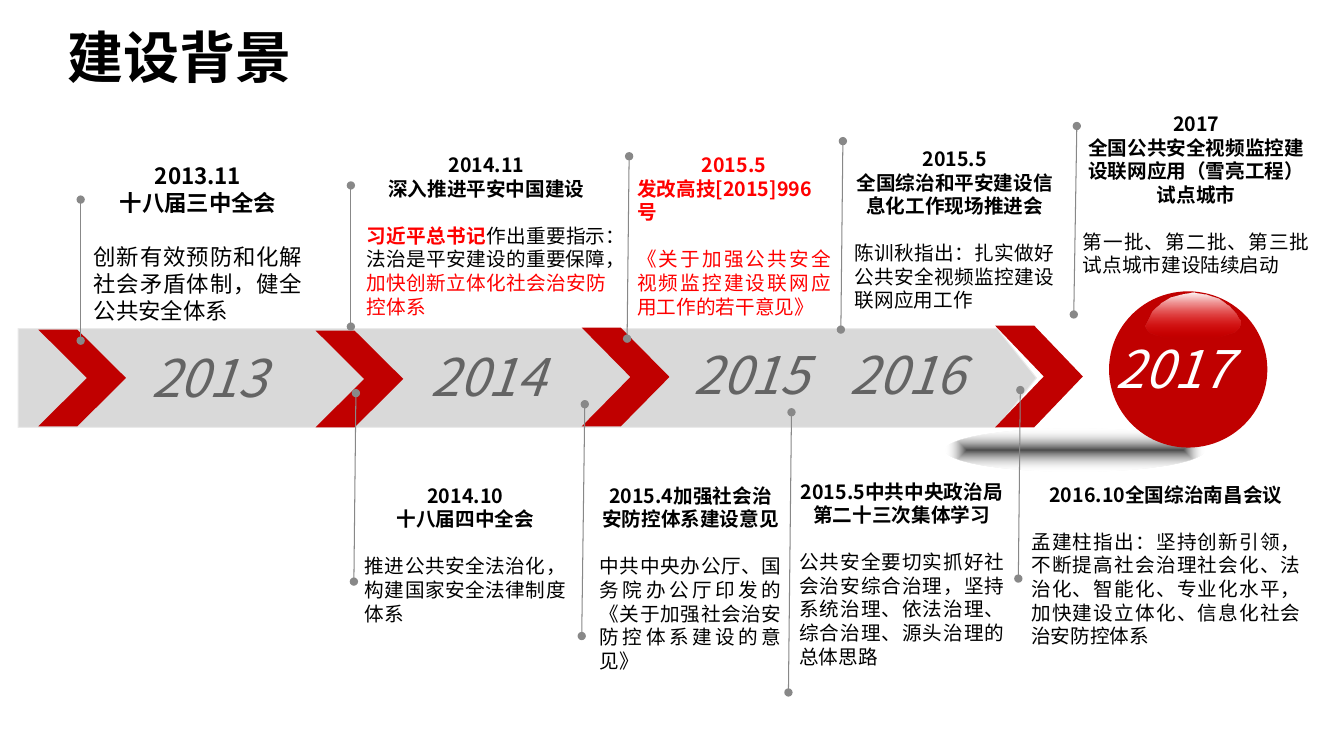
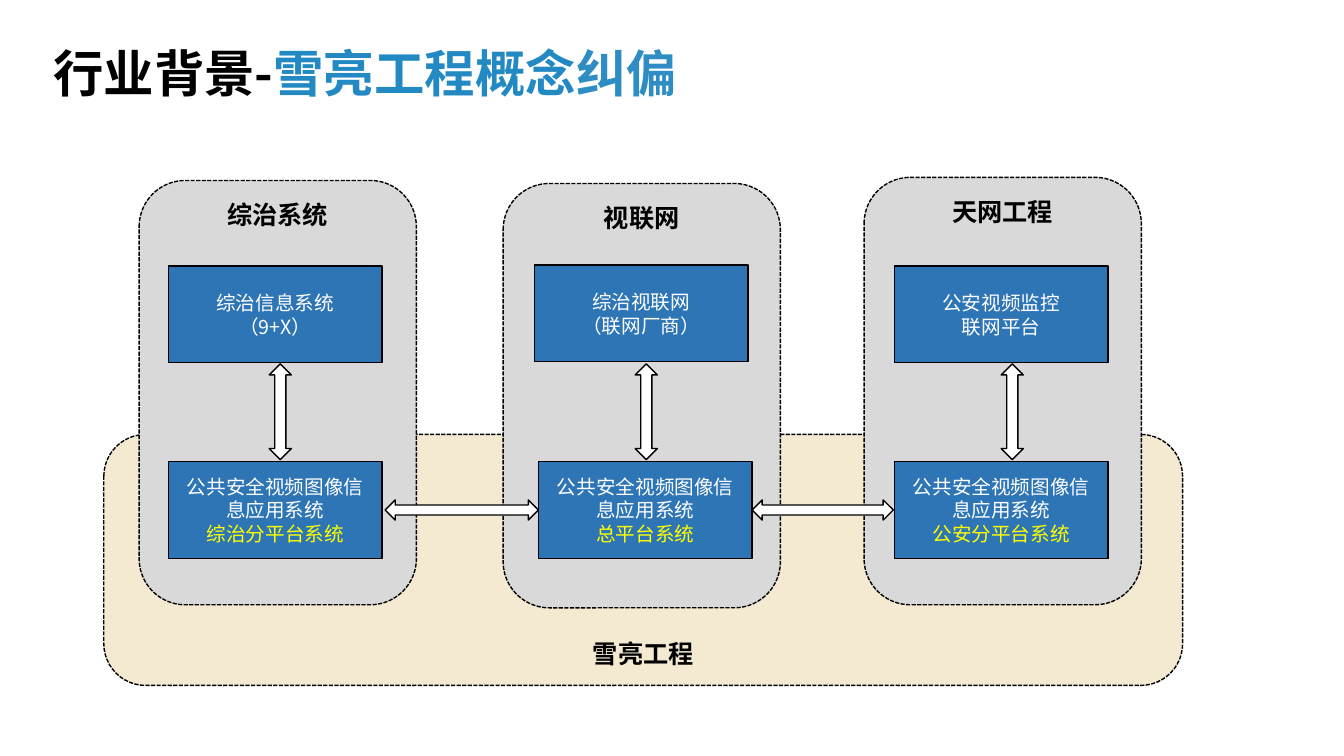
"""Build two slides: a project timeline and a system concept diagram."""
from lxml.etree import SubElement
from pptx import Presentation
from pptx.dml.color import RGBColor
from pptx.enum.dml import MSO_LINE
from pptx.enum.shapes import MSO_CONNECTOR, MSO_SHAPE as SHAPE
from pptx.enum.text import MSO_ANCHOR as ANCHOR, PP_ALIGN as ALIGN
from pptx.oxml import parse_xml
from pptx.oxml.ns import nsdecls, qn
from pptx.util import Pt

PX = 9144
FONT = "Noto Sans CJK SC"
COLOURS = {
    "black": "000000", "white": "FFFFFF", "red": "FF0000", "crimson": "C00000",
    "band": "D9D9D9", "band_edge": "EAEAEA", "year": "646464", "pin": "888888",
    "box": "2E75B6", "yellow": "FFFF00", "sand": "BF9000",
    "sky": "2289C2", "sky_end": "2E8DC2",
}
RGB = {name: RGBColor.from_string(value) for name, value in COLOURS.items()}
CENTER, LEFT, JUSTIFY = ALIGN.CENTER, ALIGN.LEFT, ALIGN.JUSTIFY
TITLE = {"bold": True}
YEAR = {"italic": True}


def write(holder, lines, size, anchor=ANCHOR.TOP, inset=(10, 5), pitch=1.2):
    """Fill a shape with (align, gap, [(text, colour, format)]) paragraphs."""
    frame = holder.text_frame
    across, down = (value * PX for value in inset)
    for name, value in {"word_wrap": True, "vertical_anchor": anchor,
                        "margin_left": across, "margin_right": across,
                        "margin_top": down, "margin_bottom": down}.items():
        setattr(frame, name, value)
    for index, (align, gap, spans) in enumerate(lines):
        para = frame.add_paragraph() if index else frame.paragraphs[0]
        para.alignment = align
        para.line_spacing = Pt(size * pitch)
        para.space_before = Pt(gap)
        for text, colour, style in spans:
            span = para.add_run()
            span.text = text
            values = {"name": FONT, "size": Pt(size), "bold": False, "italic": False}
            for name, value in (values | style).items():
                setattr(span.font, name, value)
            span.font.color.rgb = RGB[colour]
            SubElement(span._r.get_or_add_rPr(), qn("a:ea")).set("typeface", FONT)


def draw(page, kind, area, fill, edge=None, width=1, dash=None):
    """Add a flat preset shape, or a text box when kind is None."""
    place = [value * PX for value in area]
    if kind is None:
        return page.shapes.add_textbox(*place)
    shape = page.shapes.add_shape(kind, *place)
    shape.shadow.inherit = False
    shape.fill.solid()
    shape.fill.fore_color.rgb = RGB[fill]
    if edge:
        shape.line.color.rgb = RGB[edge]
        shape.line.width = Pt(width)
        shape.line.dash_style = dash
    else:
        shape.line.fill.background()
    return shape


deck = Presentation()
deck.slide_width, deck.slide_height = 1333 * PX, 750 * PX
timeline, concept = (deck.slides.add_slide(deck.slide_layouts[6]) for _ in range(2))

titles = [
    (timeline, (57, 24, 1072, 77), 40, 1.08, [("建设背景", "black", TITLE)]),
    (concept, (43, 37, 879, 71), 36, 1.2,
     [("行业背景-", "black", TITLE), ("雪亮工程概念", "sky", TITLE),
      ("纠偏", "sky_end", TITLE)]),
]
for page, area, size, pitch, spans in titles:
    write(draw(page, None, area, None), [(LEFT, 0, spans)], size, pitch=pitch)

ball_shadow = draw(timeline, SHAPE.OVAL, (938, 425, 257, 43), "black")
draw(timeline, SHAPE.OVAL, (1100, 289, 157, 155), "crimson")
gloss_outline = [
    (1230, 318), (1230, 321), (1228, 325), (1224, 329), (1218, 331), (1209, 334),
    (1200, 335), (1193, 335), (1170, 335), (1161, 335), (1153, 334), (1146, 332),
    (1141, 330), (1138, 327), (1136, 323), (1138, 319), (1143, 309), (1151, 301),
    (1161, 295), (1172, 292), (1184, 290), (1196, 292), (1208, 296), (1218, 303),
    (1225, 311),
]
pen = timeline.shapes.build_freeform(1228, 316, scale=PX)
pen.add_line_segments(gloss_outline, close=True)
gloss = pen.convert_to_shape()
gloss.shadow.inherit = False
gloss.line.fill.background()
gradients = [
    (ball_shadow, ("black", 70), ("white", 0),
     '<a:path path="rect"><a:fillToRect l="50000" t="50000" r="50000" b="50000"/></a:path>'),
    (gloss, ("white", 100), ("red", 0), '<a:lin ang="5400000" scaled="0"/>'),
]
for shape, *ends, direction in gradients:
    stops = "".join(
        f'<a:gs pos="{index * 100000}"><a:srgbClr val="{COLOURS[colour]}">'
        f'<a:alpha val="{alpha * 1000}"/></a:srgbClr></a:gs>'
        for index, (colour, alpha) in enumerate(ends))
    shape.fill.background()
    properties = shape._element.spPr
    properties.replace(properties.find(qn("a:noFill")), parse_xml(
        f'<a:gradFill {nsdecls("a")} rotWithShape="1"><a:gsLst>{stops}</a:gsLst>'
        f'{direction}</a:gradFill>'))

band = draw(timeline, SHAPE.PENTAGON, (18, 326, 1010, 98), "band", "band_edge", 0.75)
band.adjustments[0] = 0.4
for left, top, height in [(577, 325, 98), (313, 328, 96), (38, 327, 96), (987, 323, 101)]:
    chevron = draw(timeline, SHAPE.CHEVRON, (left, top, 87, height), "crimson")
    chevron.adjustments[0] = 0.555

years = [("2013", 140, 338, "year"), ("2014", 417, 337, "year"), ("2015", 678, 335, "year"),
         ("2016", 833, 335, "year"), ("2017", 1097, 329, "white")]
for year, left, top, colour in years:
    label = draw(timeline, None, (left, top, 162, 72), None)
    write(label, [(LEFT, 0, [(year, colour, YEAR)])], 37)

pins = [(80, 198, 80, 338), (353, 390, 351, 577), (624, 155, 622, 336),
        (836, 140, 834, 327), (580, 401, 577, 631), (785, 409, 782, 687),
        (1012, 387, 1010, 574), (348, 184, 348, 324), (1068, 125, 1065, 312)]
for ends in pins:
    pin = timeline.shapes.add_connector(MSO_CONNECTOR.STRAIGHT, *(end * PX for end in ends))
    pin.line.color.rgb = RGB["pin"]
    pin.line.width = Pt(0.75)
    for tag in ("a:headEnd", "a:tailEnd"):
        SubElement(pin.line._get_or_add_ln(), qn(tag)).set("type", "oval")
    SubElement(pin._element.spPr, qn("a:effectLst"))

UPPER, LOWER = (13, 7), (10, 5)
events = [
    ((80, 154, 233, 175), UPPER, 16, "black", ["2013.11", "十八届三中全会"],
     [("创新有效预防和化解社会矛盾体制，健全公共安全体系", "black", {})]),
    ((351, 145, 263, 178), UPPER, 14, "black", ["2014.11", "深入推进平安中国建设"],
     [("习近平总书记", "red", TITLE),
      ("作出重要指示：法治是平安建设的重要保障，", "black", {}),
      ("加快创新立体化社会治安防控体系", "red", {})]),
    ((619, 145, 218, 178), UPPER, 14, "red", ["2015.5", "发改高技[2015]996号"],
     [("《关于加强公共安全视频监控建设联网应用工作的若干意见》", "red", {})]),
    ((835, 139, 224, 178), UPPER, 14, "black",
     ["2015.5", "全国综治和平安建设信息化工作现场推进会"],
     [("陈训秋指出：扎实做好公共安全视频监控建设联网应用工作", "black", {})]),
    ((1061, 104, 251, 178), UPPER, 14, "black",
     ["2017", "全国公共安全视频监控建设联网应用（雪亮工程）试点城市"],
     [("第一批、第二批、第三批试点城市建设陆续启动", "black", {})]),
    ((352, 475, 219, 151), LOWER, 14, "black", ["2014.10", "十八届四中全会"],
     [("推进公共安全法治化，构建国家安全法律制度体系", "black", {})]),
    ((585, 475, 200, 175), LOWER, 14, "black", ["2015.4加强社会治安防控体系建设意见"],
     [("中共中央办公厅、国务院办公厅印发的《关于加强社会治安防控体系建设的意见》",
       "black", {})]),
    ((783, 471, 223, 199), LOWER, 14, "black", ["2015.5中共中央政治局第二十三次集体学习"],
     [("公共安全要切实抓好社会治安综合治理，坚持系统治理、依法治理、综合治理、"
       "源头治理的总体思路", "black", {})]),
    ((1013, 474, 287, 175), LOWER, 14, "black", ["2016.10全国综治南昌会议"],
     [("孟建柱指出：坚持创新引领，不断提高社会治理社会化、法治化、智能化、专业化水平，"
       "加快建设立体化、信息化社会治安防控体系", "black", {})]),
]
for area, inset, size, colour, heads, body in events:
    lines = [(LEFT if head.startswith("发改") else CENTER, 0, [(head, colour, TITLE)])
             for head in heads]
    lines.append((JUSTIFY, size * 1.2, body))
    write(draw(timeline, None, area, None), lines, size, inset=inset)

dashed = {"edge": "black", "dash": MSO_LINE.SQUARE_DOT}
project = draw(concept, SHAPE.ROUNDED_RECTANGLE, (103, 431, 1070, 249), "sand", **dashed)
sand = project._element.spPr.find(qn("a:solidFill"))[0]
SubElement(sand, qn("a:alpha")).set("val", "18000")
write(project, [(CENTER, 0, [("雪亮工程", "black", TITLE)])], 18, ANCHOR.BOTTOM)

columns = [
    ("综治系统", (138, 179, 275, 421), (167, 264), ["综治信息系统", "（9+X）"],
     267, 167, "综治分平台系统"),
    ("视联网", (499, 182, 275, 421), (530, 263), ["综治视联网", "（联网厂商）"],
     630, 534, "总平台系统"),
    ("天网工程", (857, 176, 275, 424), (887, 264), ["公安视频监控", "联网平台"],
     993, 887, "公安分平台系统"),
]
for name, area, corner, upper, arrow_left, lower_left, platform in columns:
    panel = draw(concept, SHAPE.ROUNDED_RECTANGLE, area, "band", **dashed)
    write(panel, [(CENTER, 0, [(name, "black", TITLE)])], 18)
    boxes = [
        (corner, [(text, "white") for text in upper]),
        ((lower_left, 458), [("公共安全视频图像信息应用系统", "white"), (platform, "yellow")]),
    ]
    for place, texts in boxes:
        box = draw(concept, SHAPE.RECTANGLE, (*place, 212, 96), "box", "black")
        lines = [(CENTER, 0, [(text, colour, {})]) for text, colour in texts]
        write(box, lines, 14, ANCHOR.MIDDLE)
    draw(concept, SHAPE.UP_DOWN_ARROW, (arrow_left, 361, 22, 95), "white", "black")

for left, width in [(382, 152), (746, 140)]:
    draw(concept, SHAPE.LEFT_RIGHT_ARROW, (left, 496, width, 20), "white", "black")

deck.save("out.pptx")
